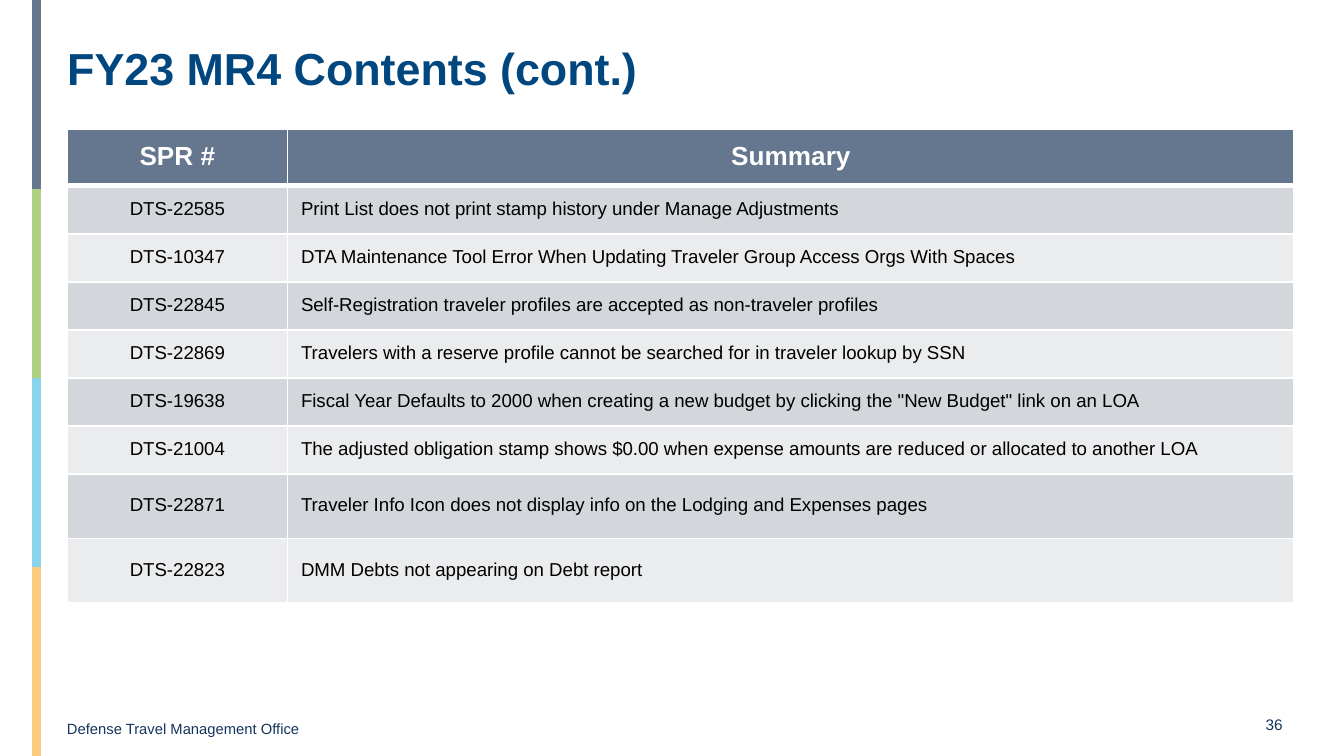
from lxml import etree
from pptx import Presentation
from pptx.dml.color import RGBColor
from pptx.enum.shapes import MSO_CONNECTOR
from pptx.enum.text import MSO_ANCHOR, PP_ALIGN
from pptx.oxml.ns import qn
from pptx.util import Inches, Pt

LINE = MSO_CONNECTOR.STRAIGHT
MID, TOP = MSO_ANCHOR.MIDDLE, MSO_ANCHOR.TOP
LEFT, MIDST = PP_ALIGN.LEFT, PP_ALIGN.CENTER
SLATE, NAVY, WHITE = "65778F", "15345D", "FFFFFF"


def style(frame, text, size, color, bold=False, align=LEFT):
    frame.text = text
    frame.word_wrap = True
    para = frame.paragraphs[0]
    para.alignment = align
    font = para.runs[0].font
    font.name, font.size, font.bold = "Arial", Pt(size), bold
    font.color.rgb = RGBColor.from_string(color)


def border(cell, side, width):
    props = cell._tc.get_or_add_tcPr()
    line = etree.SubElement(props, qn("a:" + side), w=str(Pt(width)))
    fill = etree.SubElement(line, qn("a:solidFill"))
    etree.SubElement(fill, qn("a:srgbClr"), val=WHITE)


prs = Presentation()
prs.slide_width = Inches(10)
prs.slide_height = prs.slide_width * 9 // 16
slide = prs.slides.add_slide(prs.slide_layouts[5])
shapes = slide.shapes

part = prs.slide_height // 4
for i, color in enumerate([SLATE, "AED182", "8AD3ED", "FACC80"]):
    bar = shapes.add_connector(LINE, Inches(0.27), i * part,
                               Inches(0.27), (i + 1) * part)
    bar.line.color.rgb = RGBColor.from_string(color)
    bar.line.width = Pt(5)
    etree.SubElement(bar._element.spPr, qn("a:effectLst"))

title = shapes.title
title.left, title.top = Inches(0.5), Inches(0.3)
title.width, title.height = Inches(9.13), Inches(0.55)
frame = title.text_frame
frame.margin_left = frame.margin_right = frame.margin_top = frame.margin_bottom = 0
frame.vertical_anchor = TOP
style(frame, "FY23 MR4 Contents (cont.)", 24, "00467F", True)

foot = shapes.add_textbox(Inches(0.4), Inches(5.31), Inches(8.94), Inches(0.23))
style(foot.text_frame, "Defense Travel Management Office", 7.9, NAVY)

page = shapes.add_textbox(Inches(9.33), Inches(5.32), Inches(0.3), Inches(0.19))
frame = page.text_frame
frame.margin_left = frame.margin_right = frame.margin_top = frame.margin_bottom = 0
style(frame, "36", 8.2, NAVY, align=MIDST)

rows = [
    ("SPR #", "Summary"),
    ("DTS-22585", "Print List does not print stamp history under Manage Adjustments"),
    ("DTS-10347", "DTA Maintenance Tool Error When Updating Traveler Group Access Orgs With Spaces"),
    ("DTS-22845", "Self-Registration traveler profiles are accepted as non-traveler profiles"),
    ("DTS-22869", "Travelers with a reserve profile cannot be searched for in traveler lookup by SSN"),
    ("DTS-19638", 'Fiscal Year Defaults to 2000 when creating a new budget by clicking the "New Budget" link on an LOA'),
    ("DTS-21004", "The adjusted obligation stamp shows $0.00 when expense amounts are reduced or allocated to another LOA"),
    ("DTS-22871", "Traveler Info Icon does not display info on the Lodging and Expenses pages"),
    ("DTS-22823", "DMM Debts not appearing on Debt report"),
]
highs = [0.37] + [0.33] * 6 + [0.48] * 2
grid = shapes.add_table(len(rows), 2, Inches(0.5), Inches(0.96),
                        Inches(9.13), Inches(3.6))
table = grid.table
table.columns[0].width, table.columns[1].width = Inches(1.64), Inches(7.49)

for r, (row, high) in enumerate(zip(rows, highs)):
    table.rows[r].height = Inches(high)
    head = r == 0
    shade = SLATE if head else ("EAECEE", "D3D6DB")[r % 2]
    for c, text in enumerate(row):
        cell = table.cell(r, c)
        cell.margin_left = cell.margin_right = cell.margin_bottom = Inches(0.1)
        cell.margin_top = Inches(0.09)
        cell.vertical_anchor = MID
        style(cell.text_frame, text, 14 if head else 10,
              WHITE if head else "000000", head, MIDST if head or c == 0 else LEFT)
        for side in ("lnL", "lnR"):
            border(cell, side, 1)
        border(cell, "lnT", 3 if r == 1 else 1)
        border(cell, "lnB", 3 if head else 1)
        cell.fill.solid()
        cell.fill.fore_color.rgb = RGBColor.from_string(shade)

grid.height = Inches(3.6)
prs.save("out.pptx")
